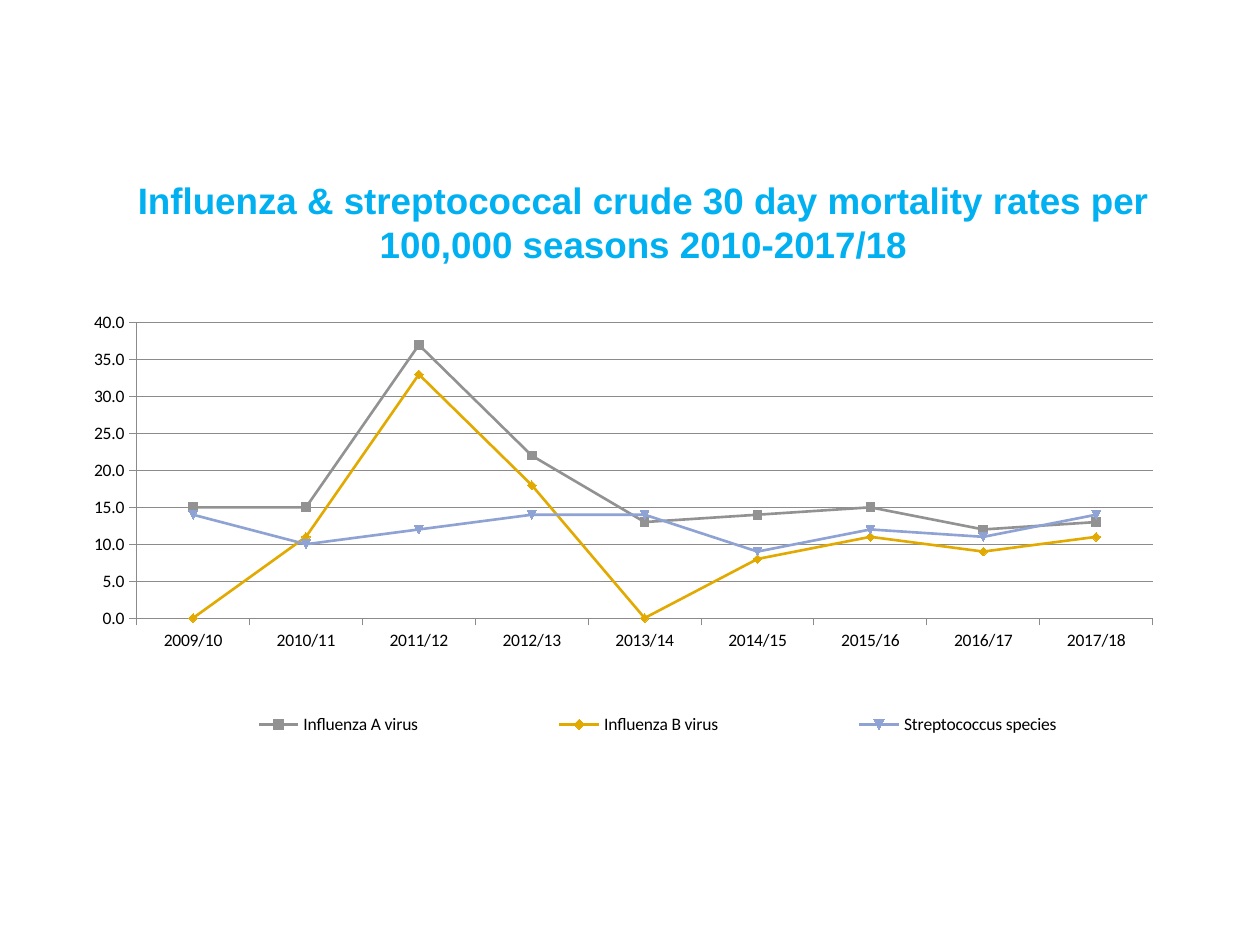
from lxml import etree
from pptx import Presentation
from pptx.chart.data import CategoryChartData
from pptx.dml.color import RGBColor
from pptx.enum.chart import XL_CHART_TYPE as ChartType, XL_LEGEND_POSITION as LegendPosition
from pptx.enum.chart import XL_TICK_MARK as TickMark
from pptx.enum.text import MSO_ANCHOR as Anchor, MSO_AUTO_SIZE as AutoSize, PP_ALIGN as Align
from pptx.oxml.ns import qn
from pptx.util import Inches, Pt

SEASONS = [f"{year}/{year % 100 + 1}" for year in range(2009, 2018)]
RATES = [
    ("Influenza A virus", "929292", (15, 15, 37, 22, 13, 14, 15, 12, 13)),
    ("Influenza B virus", "E2AA00", (0, 11, 33, 18, 0, 8, 11, 9, 11)),
    ("Streptococcus species", "8FA2D4", (14, 10, 12, 14, 14, 9, 12, 11, 14)),
]


def colour(hex_code):
    """Turn a hex string into a colour."""
    return RGBColor.from_string(hex_code)


def set_layout(parent, successor, box, inner=False):
    """Fix a chart part at fractions of the chart area."""
    for old in parent.findall(qn("c:layout")):
        parent.remove(old)
    layout = etree.Element(qn("c:layout"))
    parent.find(qn(successor)).addprevious(layout)
    manual = etree.SubElement(layout, qn("c:manualLayout"))
    settings = [("layoutTarget", "inner")] if inner else []
    settings += [("xMode", "edge"), ("yMode", "edge"), *zip("xywh", box)]
    for tag, value in settings:
        etree.SubElement(manual, qn(f"c:{tag}")).set("val", str(value))


def add_title(slide, left, top, width, height):
    """Place the heading in the title placeholder."""
    title = slide.shapes.title
    title.left, title.top, title.width, title.height = left, top, width, height
    frame = title.text_frame
    frame.text = "Influenza & streptococcal crude 30 day mortality rates per 100,000 seasons 2010-2017/18"
    frame.word_wrap = True
    frame.auto_size = AutoSize.SHAPE_TO_FIT_TEXT
    frame.vertical_anchor = Anchor.TOP
    paragraph = frame.paragraphs[0]
    paragraph.alignment = Align.CENTER
    font = paragraph.runs[0].font
    font.name, font.size, font.bold = "Arial", Pt(21), True
    font.color.rgb = colour("00B0F0")


def format_axes(chart):
    """Style both axes and the gridlines."""
    rates, seasons = chart.value_axis, chart.category_axis
    rates.minimum_scale, rates.maximum_scale, rates.major_unit = 0, 40, 5
    rates.tick_labels.number_format = "0.0"
    rates.tick_labels.number_format_is_linked = False
    rates.has_major_gridlines = True
    for axis in (rates, seasons):
        axis.major_tick_mark = TickMark.OUTSIDE
        axis.minor_tick_mark = TickMark.NONE
    for line in (rates.format.line, seasons.format.line, rates.major_gridlines.format.line):
        line.color.rgb = colour("8B8B8B")
        line.width = Pt(0.5)


def add_rates_chart(slide, left, top, width, height):
    """Draw the mortality rates as a line chart with a legend below."""
    rates_data = CategoryChartData(number_format="0.0")
    rates_data.categories = SEASONS
    for name, _, values in RATES:
        rates_data.add_series(name, values)
    chart = slide.shapes.add_chart(
        ChartType.LINE_MARKERS, left, top, width, height, rates_data).chart
    chart.has_title = False
    chart.font.name, chart.font.size = "Calibri", Pt(10)
    chart.font.color.rgb = colour("000000")
    format_axes(chart)

    plot = chart.plots[0]
    plot.vary_by_categories = False
    for series, (_, hex_code, _) in zip(plot.series, RATES):
        series.smooth = False
        series.format.line.color.rgb = colour(hex_code)
        series.format.line.width = Pt(1.5)
        series.marker.size = 5
        series.marker.format.fill.solid()
        series.marker.format.fill.fore_color.rgb = colour(hex_code)
        series.marker.format.line.color.rgb = colour(hex_code)

    chart.has_legend = True
    chart.legend.position = LegendPosition.RIGHT
    chart.legend.include_in_layout = False
    plot_area = chart.element.find(f".//{qn('c:plotArea')}")
    legend = chart.element.find(f".//{qn('c:legend')}")
    set_layout(plot_area, "c:lineChart", (0.062, 0.051, 0.901, 0.592), inner=True)
    set_layout(legend, "c:overlay", (0.05, 0.796, 0.948, 0.12))


def main():
    """Build the slide and save it."""
    deck = Presentation()
    deck.slide_width, deck.slide_height = Inches(10), Inches(7.5)
    slide = deck.slides.add_slide(deck.slide_layouts[5])
    add_rates_chart(slide, Inches(0.53), Inches(2.36), Inches(8.95), Inches(3.96))
    add_title(slide, Inches(0.81), Inches(1.36), Inches(8.59), Inches(0.81))
    deck.save("out.pptx")


if __name__ == "__main__":
    main()
